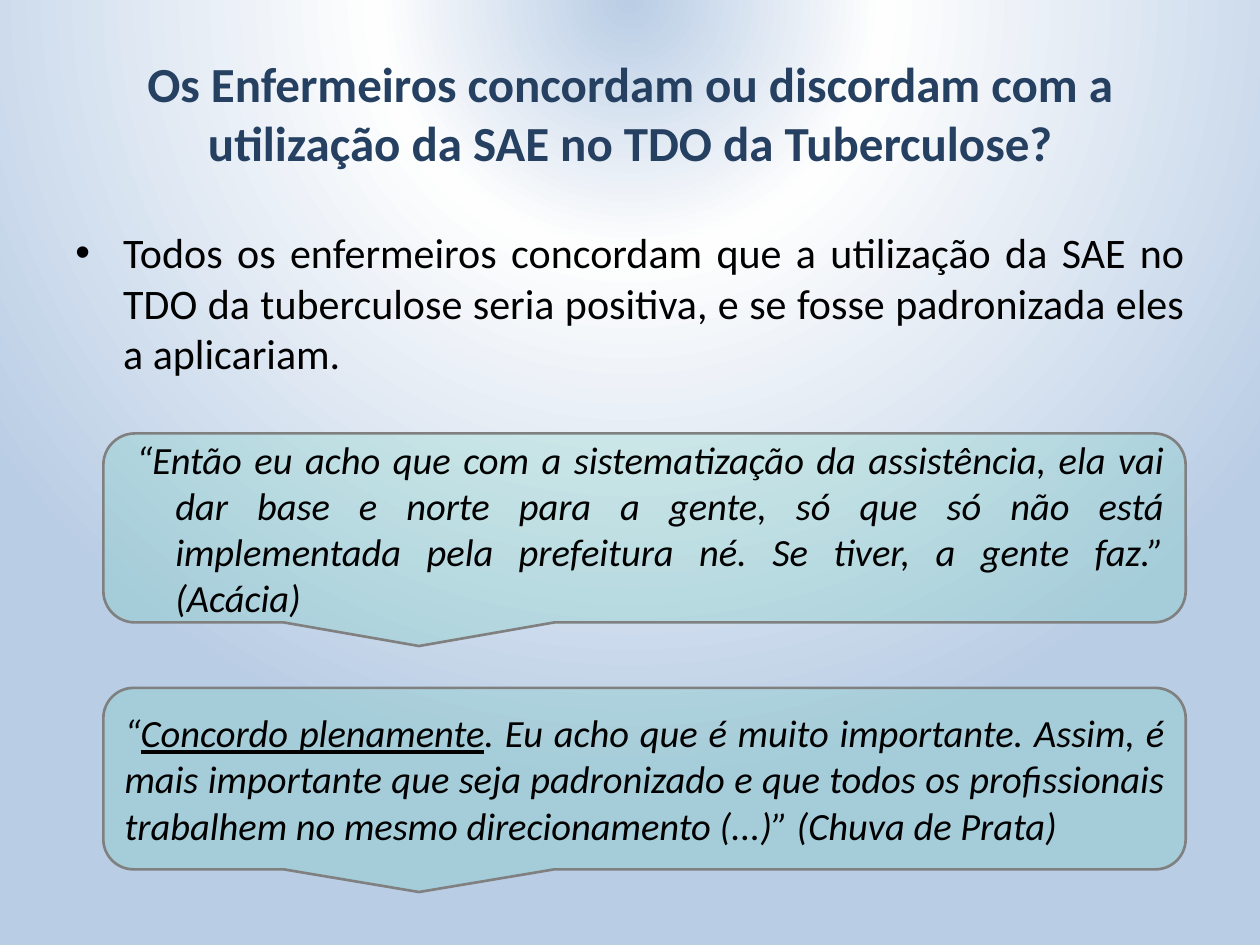
"""Build a slide on nurses' agreement with using SAE in tuberculosis DOT."""
from lxml import etree
from pptx import Presentation
from pptx.dml.color import RGBColor
from pptx.enum.shapes import MSO_SHAPE
from pptx.enum.text import MSO_ANCHOR, PP_ALIGN
from pptx.oxml import parse_xml
from pptx.oxml.ns import nsdecls, qn
from pptx.util import Inches, Pt

CALLOUT = MSO_SHAPE.ROUNDED_RECTANGULAR_CALLOUT
TOP, MIDDLE = MSO_ANCHOR.TOP, MSO_ANCHOR.MIDDLE
CENTER, JUSTIFY = PP_ALIGN.CENTER, PP_ALIGN.JUSTIFY

COLORS = {
    "title": "254061",
    "text": "000000",
    "callout": "4BC9A8",
    "border": "808080",
    "edge": "B9CDE5",
    "glow": "FEFEFE",
}


def write_text(shape, runs, anchor, align, color, font, space=0):
    frame = shape.text_frame
    frame.word_wrap = True
    frame.vertical_anchor = anchor
    paragraph = frame.paragraphs[0]
    paragraph.alignment = align
    paragraph.space_before = Pt(space)
    for text, underline in runs:
        run = paragraph.add_run()
        run.text = text
        run.font.color.rgb = RGBColor.from_string(COLORS[color])
        for name, value in {"name": "Calibri", "underline": underline, **font}.items():
            setattr(run.font, name, value)
    return paragraph


def set_indent(paragraph, left, first):
    properties = paragraph._p.get_or_add_pPr()
    properties.set("marL", str(Inches(left)))
    properties.set("indent", str(Inches(first)))
    return properties


presentation = Presentation()
presentation.slide_width, presentation.slide_height = Inches(10), Inches(7.5)
slide = presentation.slides.add_slide(presentation.slide_layouts[6])

slide.background.fill.gradient()
gradient = slide.element.find(".//" + qn("a:gradFill"))
stops = "".join(
    f'<a:gs pos="{position * 1000}"><a:srgbClr val="{COLORS[color]}"/></a:gs>'
    for position, color in [(0, "edge"), (32, "glow"), (100, "edge")]
)
gradient.getparent().replace(gradient, parse_xml(
    f'<a:gradFill {nsdecls("a")} rotWithShape="1"><a:gsLst>{stops}</a:gsLst>'
    '<a:path path="circle"><a:fillToRect l="50000" t="-80000" r="50000" b="180000"/>'
    '</a:path></a:gradFill>'
))

title = slide.shapes.add_textbox(Inches(0.5), Inches(0.45), Inches(9), Inches(1.25))
title.text_frame.margin_bottom = Inches(0.42)
title_runs = [("Os Enfermeiros concordam ou discordam com a utilização da SAE no TDO da Tuberculose?", False)]
write_text(title, title_runs, MIDDLE, CENTER, "title", {"size": Pt(28), "bold": True})

body = slide.shapes.add_textbox(Inches(0.5), Inches(1.75), Inches(9), Inches(4.95))
body_runs = [("Todos os enfermeiros concordam que a utilização da SAE no TDO da tuberculose "
              "seria positiva, e se fosse padronizada eles a aplicariam.", False)]
body_paragraph = write_text(body, body_runs, TOP, JUSTIFY, "text", {"size": Pt(24)}, 4.8)
properties = set_indent(body_paragraph, 0.38, -0.38)
etree.SubElement(properties, qn("a:buFont")).set("typeface", "Arial")
etree.SubElement(properties, qn("a:buChar")).set("char", "•")

quotes = [
    (3.44, 1.5, 6, (0.4, -0.31), [
        ("“Então eu acho que com a sistematização da assistência, ela vai dar base e norte "
         "para a gente, só que só não está implementada pela prefeitura né. Se tiver, "
         "a gente faz.” (Acácia)", False),
    ]),
    (5.46, 1.44, 0, (0, 0), [
        ("“", False),
        ("Concordo plenamente", True),
        (". Eu acho que é muito importante. Assim, é mais importante que seja padronizado "
         "e que todos os profissionais trabalhem no mesmo direcionamento (...)” "
         "(Chuva de Prata)", False),
    ]),
]
for top, height, space, indent, runs in quotes:
    callout = slide.shapes.add_shape(CALLOUT, Inches(0.82), Inches(top), Inches(8.59), Inches(height))
    callout.shadow.inherit = False
    callout.fill.solid()
    callout.fill.fore_color.rgb = RGBColor.from_string(COLORS["callout"])
    fill_color = callout._element.spPr.find(".//" + qn("a:srgbClr"))
    etree.SubElement(fill_color, qn("a:alpha")).set("val", "18000")
    callout.line.color.rgb = RGBColor.from_string(COLORS["border"])
    callout.line.width = Pt(1.5)
    quote = write_text(callout, runs, MIDDLE, JUSTIFY, "text", {"size": Pt(22), "italic": True}, space)
    set_indent(quote, *indent)

presentation.save("out.pptx")
